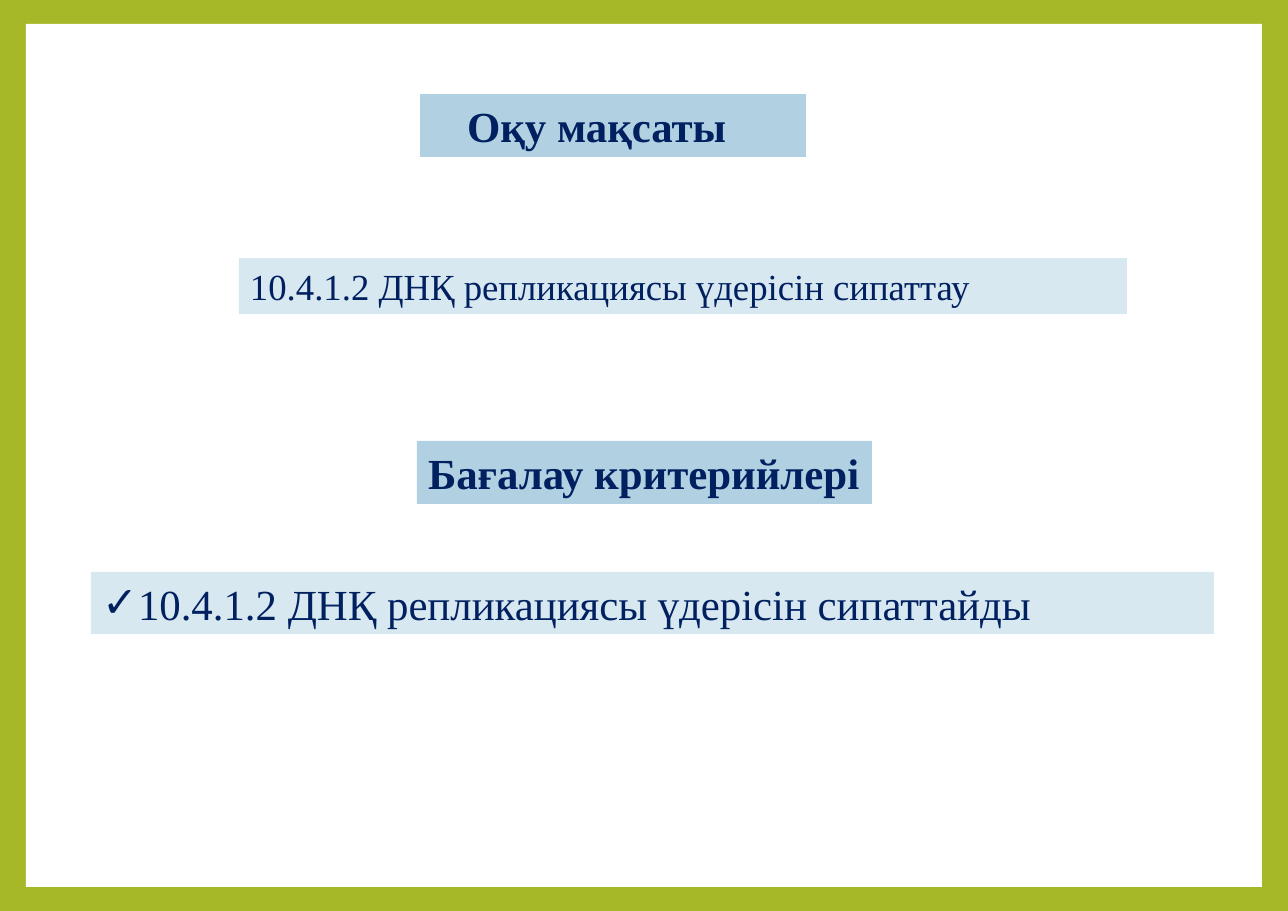
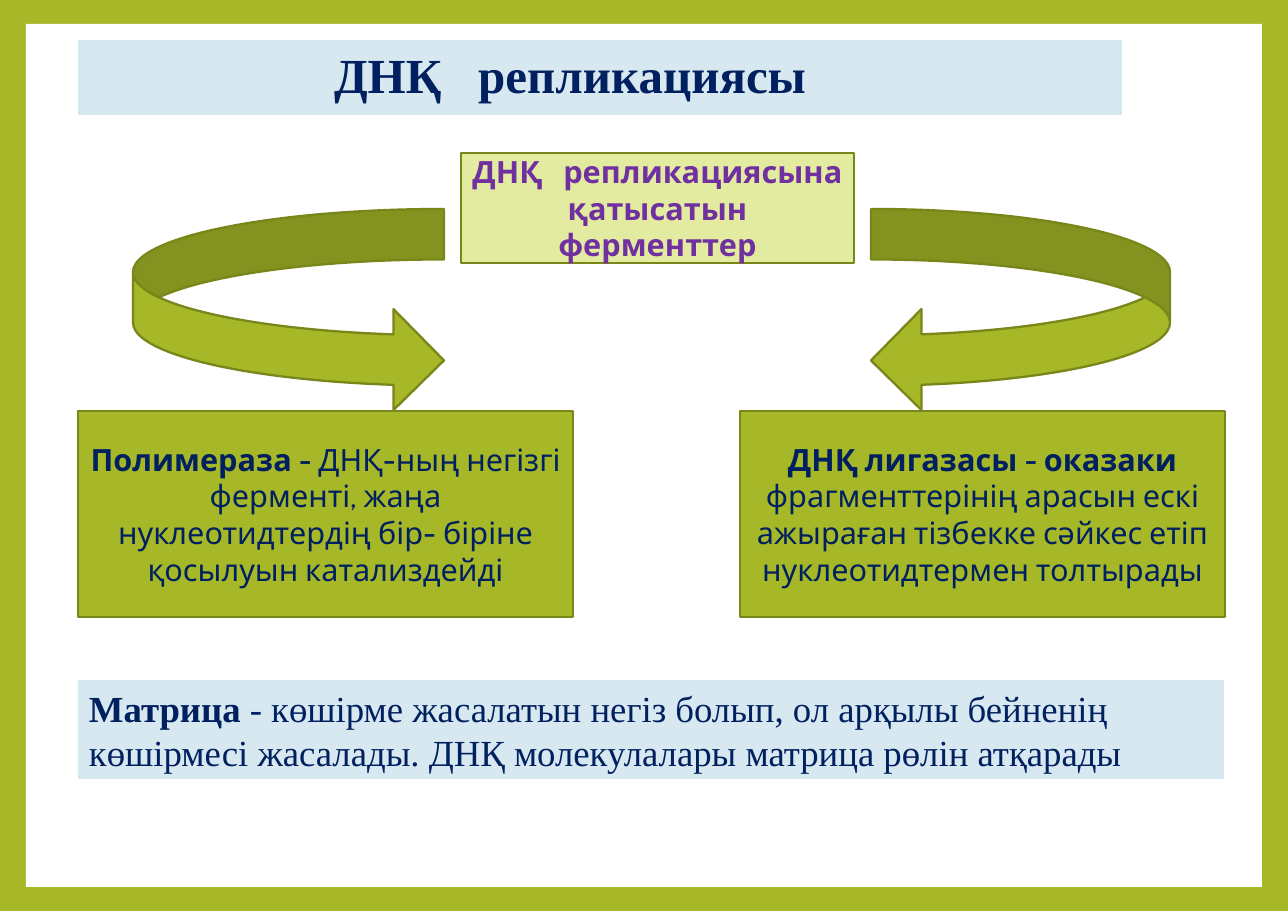
from lxml.etree import SubElement
from pptx import Presentation
from pptx.dml.color import RGBColor
from pptx.enum.shapes import MSO_SHAPE
from pptx.enum.text import MSO_ANCHOR, MSO_AUTO_SIZE, PP_ALIGN
from pptx.oxml.ns import qn
from pptx.util import Emu, Pt

EMU_PER_PX = 914400 / 110.2
SLIDE_WIDTH, SLIDE_HEIGHT = 1288, 911
FRAME = (26, 24, 1236, 863)

GREEN, DARK_GREEN, PALE_GREEN = "A6B727", "79861A", "E2EBA0"
BLUE, PALE_BLUE = "B1D1E3", "D8E8F1"
NAVY, PURPLE, WHITE = "002060", "7030A0", "FFFFFF"
SERIF, SANS = "Times New Roman", "Cabin"


def px(length):
    return Emu(round(length * EMU_PER_PX))


def paint(fill, color):
    fill.solid()
    fill.fore_color.rgb = RGBColor.from_string(color)


def place(shape, box):
    shape.left, shape.top, shape.width, shape.height = map(px, box)


def add_shape(slide, kind, box, fill, line=None):
    shape = slide.shapes.add_shape(kind, *map(px, box))
    shape.shadow.inherit = False
    paint(shape.fill, fill)
    if line:
        paint(shape.line.fill, line)
        shape.line.width = Pt(1.5)
    else:
        shape.line.fill.background()
    return shape


def add_bullet(paragraph, char, indent):
    properties = paragraph._p.get_or_add_pPr()
    properties.set("marL", str(px(indent)))
    properties.set("indent", str(-px(indent)))
    SubElement(properties, qn("a:buChar")).set("char", char)


def write(shape, parts, size, font=SERIF, color=NAVY, align=PP_ALIGN.LEFT,
          indent=11, margin=11, line_spacing=1.0, bullet=None):
    """Fill a shape with one paragraph; parts are (text, bold, extra spacing in pt)."""
    frame = shape.text_frame
    frame.word_wrap = True
    frame.auto_size = MSO_AUTO_SIZE.NONE
    frame.vertical_anchor = MSO_ANCHOR.MIDDLE
    frame.margin_left, frame.margin_right = px(indent), px(margin)
    frame.margin_top = frame.margin_bottom = px(5)
    paragraph = frame.paragraphs[0]
    paragraph.alignment = align
    paragraph.line_spacing = line_spacing
    paragraph.space_before = Pt(0)
    if bullet:
        add_bullet(paragraph, bullet, 36)
    paragraph.font.name = font
    paragraph.font.size = Pt(size)
    paragraph.font.color.rgb = RGBColor.from_string(color)
    for text, bold, spacing in parts:
        run = paragraph.add_run()
        run.text = text
        run.font.bold = bold
        if spacing:
            run.font._element.set("spc", str(spacing * 100))


def add_title(slide, box, fill, parts, size, indent, line_spacing=1.0):
    title = slide.shapes.title
    place(title, box)
    paint(title.fill, fill)
    write(title, parts, size, indent=indent, line_spacing=line_spacing)


def add_band(slide, box, fill, parts, size):
    write(add_shape(slide, MSO_SHAPE.RECTANGLE, box, fill), parts, size)


def add_card(slide, box, fill, parts, color=NAVY, margin=11):
    card = add_shape(slide, MSO_SHAPE.RECTANGLE, box, fill, DARK_GREEN)
    write(card, parts, 20, SANS, color, PP_ALIGN.CENTER, margin, margin)


def add_enzyme(slide, box, arrow, arrow_offset, arrow_width, parts):
    """Place a curved arrow above the card that describes an enzyme."""
    left, top, width, height = box
    arrow_height = 202
    add_shape(slide, arrow, (left + arrow_offset, top, arrow_width, arrow_height),
              GREEN, DARK_GREEN)
    add_card(slide, (left, top + arrow_height, width, height - arrow_height),
             GREEN, parts)


def style_master(prs, slide):
    """Give the master a green background and a white sheet."""
    master = prs.slide_master
    paint(master.background.fill, GREEN)
    sheet = add_shape(slide, MSO_SHAPE.RECTANGLE, FRAME, WHITE)
    master.shapes.element.insert(2, sheet.element)


def fill_goals_slide(slide):
    add_title(slide, (420, 94, 386, 63), BLUE, [("Оқу мақсаты", True, 0)], 28, 47)
    add_band(slide, (239, 258, 888, 56), PALE_BLUE,
             [("10.4.1.2 ДНҚ репликациясы үдерісін сипаттау", False, 0)], 24)
    add_band(slide, (417, 441, 455, 63), BLUE,
             [("Бағалау критерийлері", True, 0)], 28)
    criterion = slide.placeholders[1]
    place(criterion, (91, 572, 1123, 62))
    paint(criterion.fill, PALE_BLUE)
    write(criterion, [("10.4.1.2 ДНҚ репликациясы үдерісін сипаттайды", False, 0)],
          28, bullet="✓")


def fill_replication_slide(slide):
    add_title(slide, (78, 40, 1044, 75), PALE_BLUE,
              [("ДНҚ", True, 0), (" ", True, 16), ("репликациясы", True, 0)],
              32, 256, 0.9)
    add_card(slide, (461, 153, 393, 110), PALE_GREEN,
             [("ДНҚ", True, 0), (" ", True, 9),
              ("репликациясына қатысатын ферменттер", True, 0)], PURPLE, margin=5)
    add_enzyme(slide, (78, 209, 495, 408), MSO_SHAPE.CURVED_RIGHT_ARROW, 55, 311,
               [("Полимераза - ", True, 0),
                ("ДНҚ-ның негізгі ферменті, жаңа нуклеотидтердің бір- біріне "
                 "қосылуын катализдейді", False, 0)])
    add_enzyme(slide, (740, 209, 485, 408), MSO_SHAPE.CURVED_LEFT_ARROW, 131, 299,
               [("ДНҚ лигазасы - оказаки ", True, 0),
                ("фрагменттерінің арасын ескі ажыраған тізбекке сәйкес етіп "
                 "нуклеотидтермен толтырады", False, 0)])
    add_band(slide, (78, 680, 1146, 99), PALE_BLUE,
             [("Матрица ", True, 0),
              ("- көшірме жасалатын негіз болып, ол арқылы бейненің көшірмесі "
               "жасалады. ДНҚ молекулалары матрица рөлін атқарады", False, 0)], 24)


def main():
    prs = Presentation()
    prs.slide_width, prs.slide_height = px(SLIDE_WIDTH), px(SLIDE_HEIGHT)
    title_and_list, title_only = prs.slide_layouts[1], prs.slide_layouts[5]
    goals = prs.slides.add_slide(title_and_list)
    style_master(prs, goals)
    fill_goals_slide(goals)
    fill_replication_slide(prs.slides.add_slide(title_only))
    prs.save("out.pptx")


if __name__ == "__main__":
    main()
